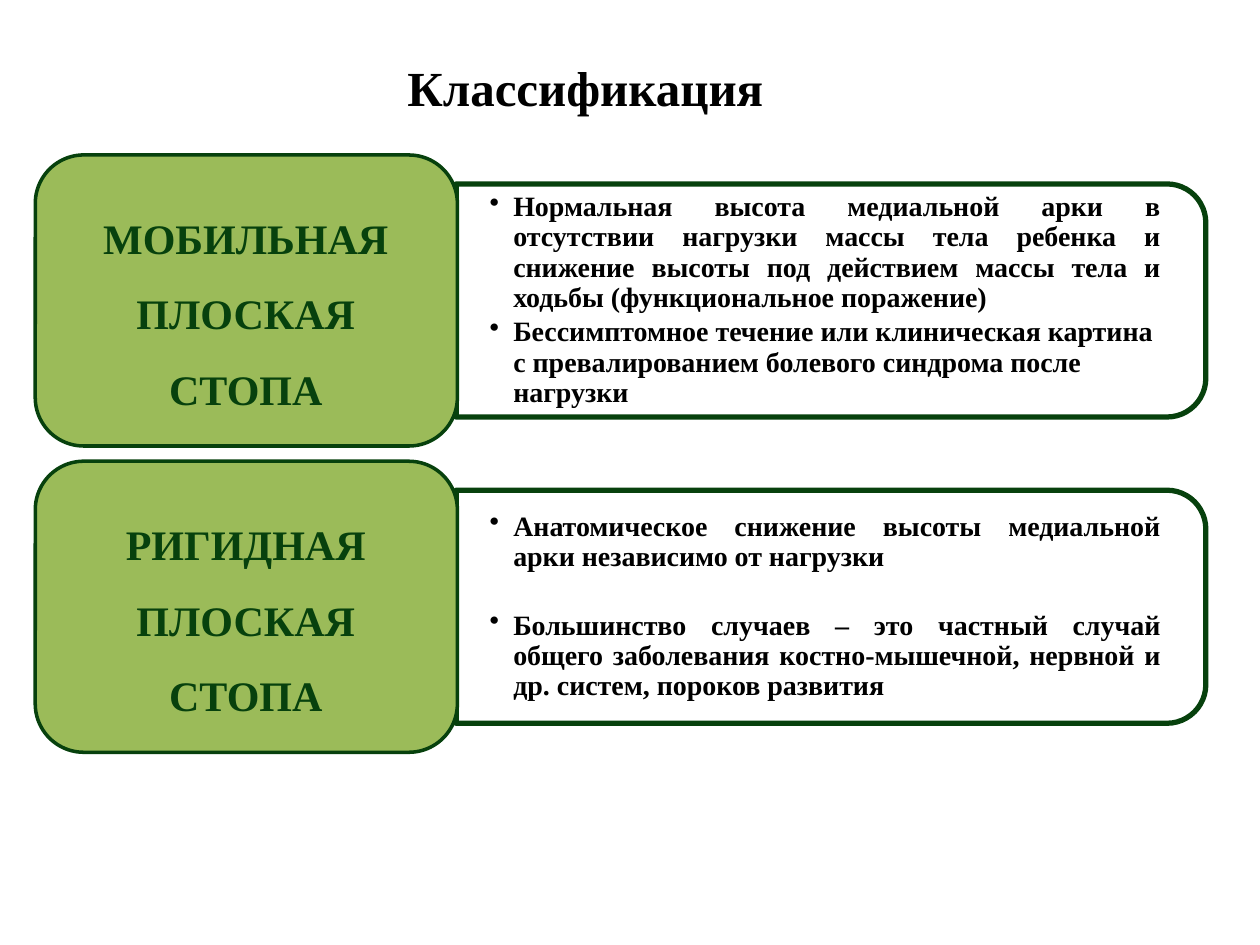
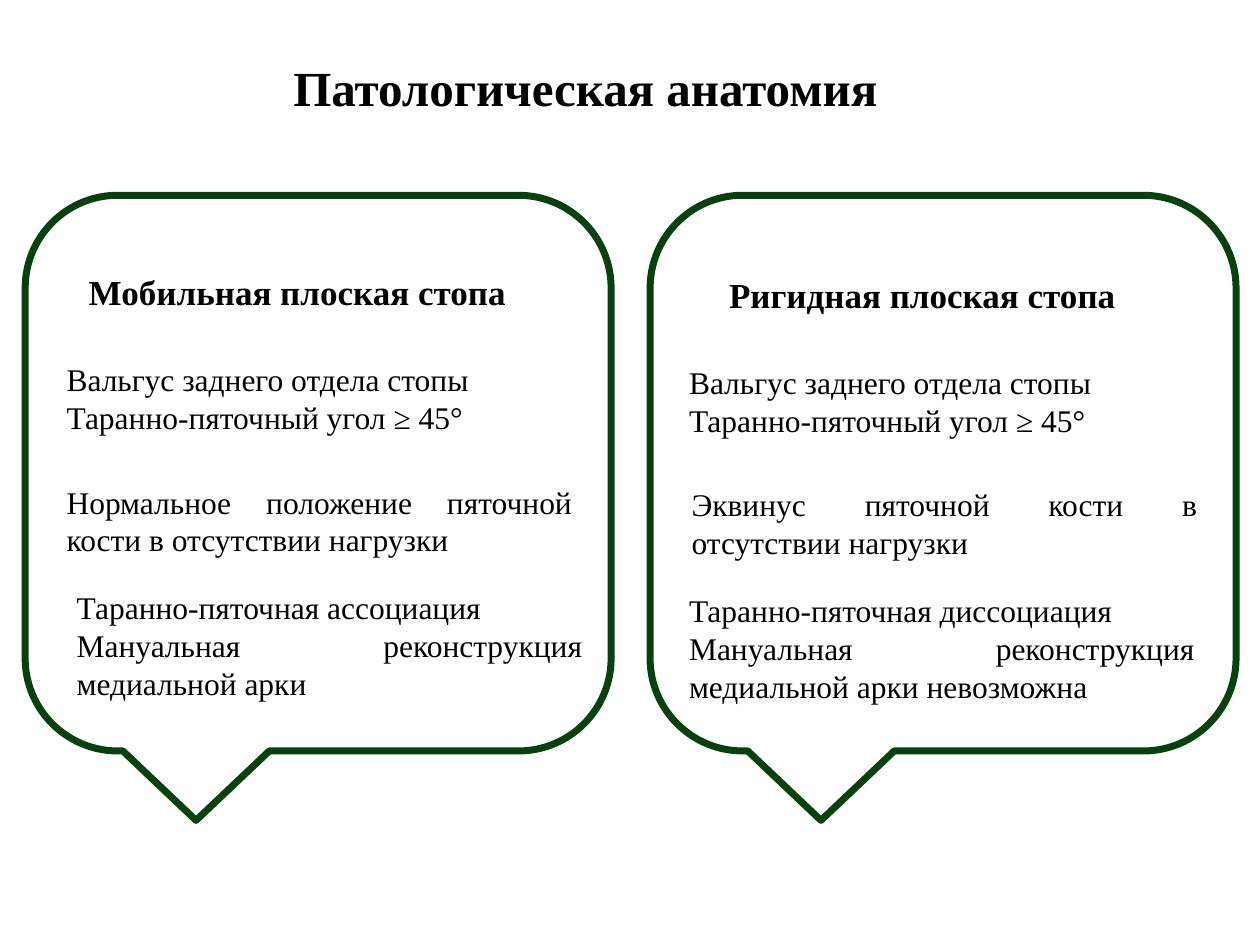
from pptx import Presentation
from pptx.dml.color import RGBColor
from pptx.enum.shapes import MSO_SHAPE
from pptx.enum.text import MSO_ANCHOR, MSO_AUTO_SIZE, PP_ALIGN
from pptx.util import Pt
from lxml.etree import SubElement

HUES = {"green": "07410D", "lime": "9BBB59", "black": "000000"}
FACE = "Times New Roman"
LEFT, MID, JUST = PP_ALIGN.LEFT, PP_ALIGN.CENTER, PP_ALIGN.JUSTIFY


def put_shape(slide, kind, box, width, fill=None):
    shape = slide.shapes.add_shape(kind, *[Pt(v) for v in box])
    shape.shadow.inherit = False
    shape.line.color.rgb = RGBColor.from_string(HUES["green"])
    shape.line.width = Pt(width)
    if fill:
        shape.fill.solid()
        shape.fill.fore_color.rgb = RGBColor.from_string(HUES[fill])
    else:
        shape.fill.background()
    return shape


def put_text(slide, box, lines, size, align, bold=False, hue="black"):
    frame = slide.shapes.add_textbox(*[Pt(v) for v in box]).text_frame
    frame.word_wrap = True
    frame.auto_size = MSO_AUTO_SIZE.SHAPE_TO_FIT_TEXT
    frame.text = "\n".join(lines)
    for para in frame.paragraphs:
        para.alignment = align
        for run in para.runs:
            run.font.name = FACE
            run.font.size = Pt(size)
            run.font.bold = bold
            run.font.color.rgb = RGBColor.from_string(HUES[hue])
    return frame


deck = Presentation()
deck.slide_width, deck.slide_height = Pt(720), Pt(540)
slides = []
for title in ["Классификация", "Патологическая анатомия"]:
    slide = deck.slides.add_slide(deck.slide_layouts[6])
    put_text(slide, (141.84, 29.5, 385.2, 41), [title], 28, MID, True)
    slides.append(slide)
types, signs = slides

rows = [
    ("МОБИЛЬНАЯ ПЛОСКАЯ СТОПА", 2.4, [
        ("Нормальная высота медиальной арки в отсутствии нагрузки массы тела ребенка "
         "и снижение высоты под действием массы тела и ходьбы (функциональное поражение)", JUST),
        ("Бессимптомное течение или клиническая картина с превалированием "
         "болевого синдрома после нагрузки", LEFT)]),
    ("РИГИДНАЯ ПЛОСКАЯ СТОПА", 22, [
        ("Анатомическое снижение высоты медиальной арки независимо от нагрузки", JUST),
        ("Большинство случаев – это частный случай общего заболевания "
         "костно-мышечной, нервной и др. систем, пороков развития", JUST)]),
]
for i, (name, gap, facts) in enumerate(rows):
    top = 88.56 + i * 175
    panel = put_shape(types, MSO_SHAPE.ROUND_2_SAME_RECTANGLE,
                      (408.24, top - 131.04, 133.2, 428.4), 3)
    panel.rotation = 90

    frame = put_text(types, (260.64, top + 23.04, 421.92, 120.24),
                     [fact for fact, _ in facts], 16, JUST, True)
    frame.auto_size = MSO_AUTO_SIZE.NONE
    frame.vertical_anchor = MSO_ANCHOR.MIDDLE
    frame.margin_left = frame.margin_right = Pt(19.2)
    frame.margin_top = frame.margin_bottom = Pt(9.9)
    for para, (_, align) in zip(frame.paragraphs, facts):
        para.alignment = align
        para.line_spacing = 0.9
        para.space_after = Pt(2.4)
        props = para._p.get_or_add_pPr()
        props.set("marL", str(Pt(13.5)))
        props.set("indent", str(Pt(-13.5)))
        space = props.nsmap["a"]
        SubElement(props, f"{{{space}}}buChar", char="•")
    frame.paragraphs[0].space_after = Pt(gap)

    put_shape(types, MSO_SHAPE.ROUNDED_RECTANGLE, (20.16, top, 241.2, 166.32), 2, "lime")
    frame = put_text(types, (28.08, top + 7.92, 224.64, 150.48), [name], 24, MID, True, "green")
    frame.auto_size = MSO_AUTO_SIZE.NONE
    frame.vertical_anchor = MSO_ANCHOR.MIDDLE
    frame.paragraphs[0].line_spacing = 1.5
    frame.paragraphs[0].space_after = Pt(8.4)

shared = ["Вальгус заднего отдела стопы", "Таранно-пяточный угол ≥ 45°"]
cards = [
    (14.4, 0, "Мобильная плоская стопа", [
        (16.56, 202.3, shared),
        (16.56, 272.2, ["Нормальное положение пяточной кости в отсутствии нагрузки"]),
        (22.32, 332.6, ["Таранно-пяточная ассоциация",
                        "Мануальная реконструкция медиальной арки"])]),
    (371.52, 1.6, "Ригидная плоская стопа", [
        (15.12, 202.3, shared),
        (16.56, 272.2, ["Эквинус пяточной кости в отсутствии нагрузки"]),
        (15.12, 332.6, ["Таранно-пяточная диссоциация",
                        "Мануальная реконструкция медиальной арки невозможна"])]),
]
for left, drop, name, notes in cards:
    put_shape(signs, MSO_SHAPE.ROUNDED_RECTANGULAR_CALLOUT, (left, 111.6, 334.8, 317.52), 4)
    put_text(signs, (left + 22.32, 151.2 + drop, 266.4, 31.5), [name], 20, MID, True)
    for shift, top, lines in notes:
        high = 72.7 if top > 300 else 50.9
        put_text(signs, (left + shift, top + drop, 303.12, high), lines, 18, JUST)

deck.save("out.pptx")
